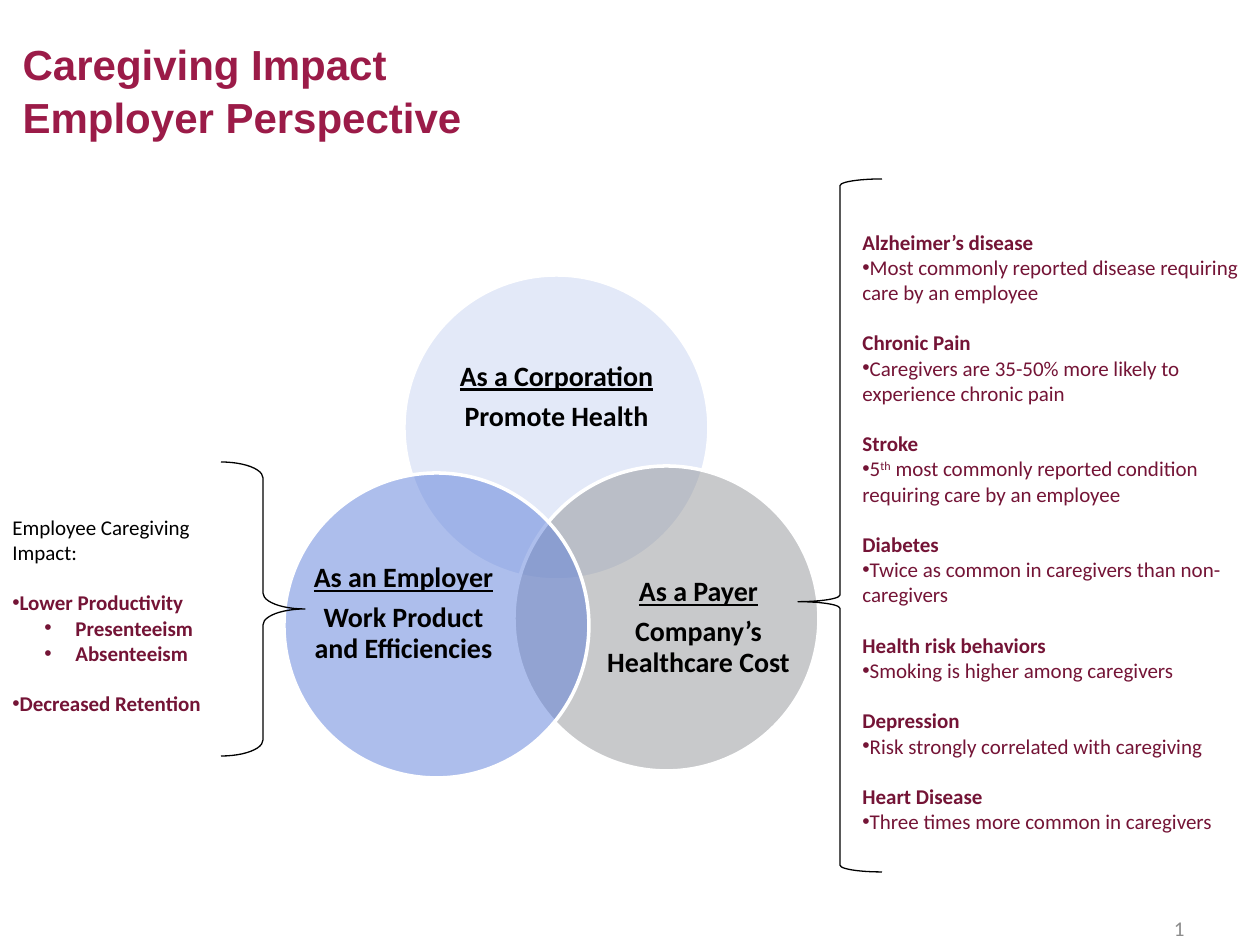
from dataclasses import dataclass

from lxml import etree
from pptx import Presentation
from pptx.dml.color import RGBColor
from pptx.enum.shapes import MSO_SHAPE
from pptx.enum.text import MSO_ANCHOR, PP_ALIGN
from pptx.oxml.ns import qn
from pptx.util import Pt

ELLIPSE = MSO_SHAPE.OVAL
LEFT_BRACE, RIGHT_BRACE = MSO_SHAPE.LEFT_BRACE, MSO_SHAPE.RIGHT_BRACE
LEFT, CENTER, RIGHT = PP_ALIGN.LEFT, PP_ALIGN.CENTER, PP_ALIGN.RIGHT
TOP, MIDDLE = MSO_ANCHOR.TOP, MSO_ANCHOR.MIDDLE
EMU_PER_PX = 914400 / 126


@dataclass(frozen=True)
class Theme:
    title_font: str = "Arial"
    body_font: str = "Calibri"
    title: str = "9B1B48"
    accent: str = "741436"
    ink: str = "000000"
    muted: str = "8C8C8C"
    outline: str = "FFFFFF"
    corporation: str = "C9D4F3"
    payer: str = "939598"
    employer: str = "5D7FDA"
    title_size: int = 24
    circle_size: int = 16
    body_size: int = 12
    group_gap: float = 14.4


THEME = Theme()

CONDITIONS = [
    ("Alzheimer’s disease", ["Most commonly reported disease requiring care by an employee"]),
    ("Chronic Pain", ["Caregivers are 35-50% more likely to experience chronic pain"]),
    ("Stroke", ["5", "th", " most commonly reported condition requiring care by an employee"]),
    ("Diabetes", ["Twice as common in caregivers than non-caregivers"]),
    ("Health risk behaviors", ["Smoking is higher among caregivers"]),
    ("Depression", ["Risk strongly correlated with caregiving"]),
    ("Heart Disease", ["Three times more common in caregivers"]),
]

# Text, indent in px, and whether the line opens a new group
IMPACTS = [
    ("Lower Productivity", 0, True),
    ("Presenteeism", 63, False),
    ("Absenteeism", 63, False),
    ("Decreased Retention", 0, True),
]


def px(length):
    return round(length * EMU_PER_PX)


def place(box):
    return [px(length) for length in box]


def within(box, left, top, width, height):
    """Turn a place relative to box into a place on the page."""
    return box[0] + left, box[1] + top, width, height


def add_span(para, text, color, size=THEME.body_size, bold=False, font=THEME.body_font):
    span = para.add_run()
    span.text = text
    span.font.name = font
    span.font.size = Pt(size)
    span.font.bold = bold
    span.font.color.rgb = RGBColor.from_string(color)
    return span


def add_text_frame(page, box, anchor=TOP):
    frame = page.shapes.add_textbox(*place(box)).text_frame
    frame.word_wrap = True
    frame.vertical_anchor = anchor
    return frame


def next_para(frame, gap=0):
    """Return the empty first paragraph, or a new one with gap points before it."""
    first = frame.paragraphs[0]
    if not first.runs:
        return first
    para = frame.add_paragraph()
    para.space_before = Pt(gap)
    return para


def add_bullet(para, margin=0, hanging=0):
    properties = para._p.get_or_add_pPr()
    properties.set("marL", str(px(margin)))
    properties.set("indent", str(-px(hanging)))
    etree.SubElement(properties, qn("a:buFont")).set("typeface", "Arial")
    etree.SubElement(properties, qn("a:buChar")).set("char", "•")


def add_brace(page, kind, box, curve, point):
    brace = page.shapes.add_shape(kind, *place(box))
    brace.shadow.inherit = False
    brace.fill.background()
    brace.line.color.rgb = RGBColor.from_string(THEME.ink)
    brace.line.width = Pt(0.75)
    brace.adjustments[0] = curve
    brace.adjustments[1] = point


def add_title(page, box, lines):
    title = page.shapes.title
    title.left, title.top, title.width, title.height = place(box)
    frame = title.text_frame
    frame.vertical_anchor = MIDDLE
    para = frame.paragraphs[0]
    para.alignment = LEFT
    para.line_spacing = 1.05
    for index, line in enumerate(lines):
        if index:
            para.add_line_break()
        add_span(para, line, THEME.title, THEME.title_size, True, THEME.title_font)


def add_circle(page, box, color, label_box, heading, detail):
    """Draw a half-transparent circle; label_box is relative to box."""
    circle = page.shapes.add_shape(ELLIPSE, *place(box))
    circle.shadow.inherit = False
    circle.fill.solid()
    circle.fill.fore_color.rgb = RGBColor.from_string(color)
    tint = circle._element.spPr.find(qn("a:solidFill"))[0]
    etree.SubElement(tint, qn("a:alpha")).set("val", "50000")
    circle.line.color.rgb = RGBColor.from_string(THEME.outline)
    circle.line.width = Pt(2)

    frame = add_text_frame(page, within(box, *label_box), MIDDLE)
    frame.margin_left = frame.margin_top = frame.margin_right = frame.margin_bottom = 0
    for text, underlined in ((heading, True), (detail, False)):
        para = next_para(frame, 5.6)
        para.alignment = CENTER
        para.line_spacing = 0.9
        span = add_span(para, text, THEME.ink, THEME.circle_size, True)
        span.font.underline = underlined


def add_venn(page, box):
    size = 305
    add_circle(page, within(box, 120, 0, size, size), THEME.corporation,
               (41, 54, 223, 137), "As a Corporation", "Promote Health")
    add_circle(page, within(box, 230, 191, size, size), THEME.payer,
               (93, 78, 183, 168), "As a Payer", "Company’s Healthcare Cost")
    add_circle(page, within(box, 0, 198, size, size), THEME.employer,
               (28, 57, 183, 168), "As an Employer", "Work Product and Efficiencies")


def add_conditions(page, box):
    frame = add_text_frame(page, within(box, 52, 44, 410, 620))
    for heading, parts in CONDITIONS:
        add_span(next_para(frame, THEME.group_gap), heading, THEME.accent, bold=True)
        para = next_para(frame)
        add_bullet(para)
        for part in parts:
            span = add_span(para, part, THEME.accent)
            if part == "th":
                span._r.get_or_add_rPr().set("baseline", "30000")
    add_brace(page, LEFT_BRACE, within(box, 0, 0, 84, 693), 0.08, 0.61)


def add_impacts(page, box):
    frame = add_text_frame(page, within(box, 0, 46, 230, 220))
    add_span(next_para(frame), "Employee Caregiving Impact:", THEME.ink)
    for text, margin, opens_group in IMPACTS:
        para = next_para(frame, THEME.group_gap if opens_group else 0)
        add_bullet(para, margin, margin // 2)
        add_span(para, text, THEME.accent, bold=True)
    add_brace(page, RIGHT_BRACE, within(box, 221, 0, 84, 294), 0.19, 0.5)


def add_page_number(page, box, number):
    para = next_para(add_text_frame(page, box, MIDDLE))
    para.alignment = RIGHT
    add_span(para, str(number), THEME.muted)


def main():
    deck = Presentation()
    deck.slide_width, deck.slide_height = px(1260), px(945)
    page = deck.slides.add_slide(deck.slide_layouts[5])
    add_title(page, (10, 10, 1134, 158), ["Caregiving Impact", "Employer Perspective"])
    add_venn(page, (284, 275, 535, 503))
    add_conditions(page, (798, 179, 462, 693))
    add_impacts(page, (0, 462, 305, 294))
    add_page_number(page, (903, 903, 294, 50), 1)
    deck.save("out.pptx")


if __name__ == "__main__":
    main()
